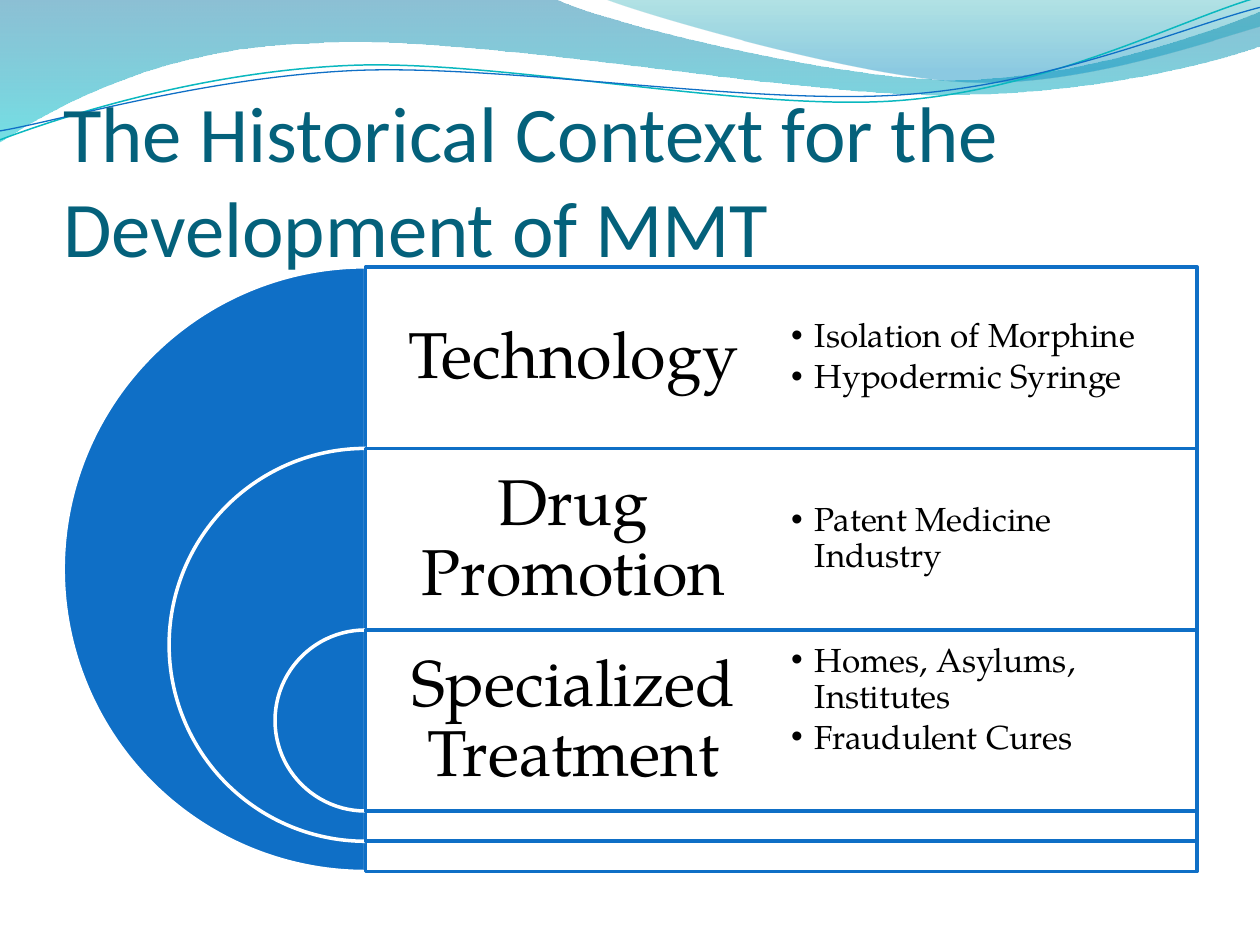
from lxml import etree
from pptx import Presentation
from pptx.dml.color import RGBColor
from pptx.enum import shapes, text
from pptx.oxml.ns import qn
from pptx.util import Cm, Pt

THEME = {
    "title": "04617B", "text": "000000", "accent": "0F6FC6", "paper": "FFFFFF", "teal": "0AB8BF",
    "title_font": "Calibri", "body_font": "TeX Gyre Pagella", "bullet_font": "Arial",
    "title_size": 45, "label_size": 37, "bullet_size": 19,
}

TITLE = "The Historical Context for the Development of MMT"
# Label, bullets, extra bottom inset (cm) that lifts the list
TOPICS = [
    ("Technology", ["Isolation of Morphine", "Hypodermic Syringe"], 0),
    ("Drug Promotion", ["Patent Medicine Industry"], 0),
    ("Specialized Treatment", ["Homes, Asylums, Institutes", "Fraudulent Cures"], 0.84),
]

# Wave outlines in cm: one point is a straight step, three points a Bezier curve.
# Gradient stops are position, colour, opacity in percent.
WAVES = [
    ((0, 0),
     [[(11.18, -0.03)],
      [(12.09, 0.43), (16.87, 1.6), (19.25, 1.6)],
      [(21.67, 1.6), (24.33, 0.66), (25.4, 0.23)],
      [(25.43, 0.91)],
      [(24.97, 1.12), (22.1, 1.93), (18.95, 1.91)],
      [(15.8, 1.91), (9.7, 0.71), (6.53, 0.86)],
      [(3.28, 0.91), (1.17, 2.11), (-0.03, 2.87)]],
     [(0, "0074A1", 45), (1, "00C6CF", 55)]),
    ((12.17, -0.03),
     [[(12.93, 0.28), (17.32, 1.57), (19.53, 1.65)],
      [(21.74, 1.75), (24.41, 0.81), (25.4, 0.53)],
      [(25.4, 0)]],
     [(0, "00A1A9", 30), (0.8, "008BBF", 45)]),
]
RIPPLES = [
    ((0, 2.82),
     [[(1.22, 2.36), (4.01, 1.45), (7.04, 1.32)],
      [(10.03, 1.19), (15.06, 2.26), (18.11, 2.03)],
      [(21.16, 1.8), (23.83, 0.38), (25.35, -0.05)]],
     "teal", 0.85),
    ((0, 2.64),
     [[(1.19, 2.44), (4.17, 1.55), (7.19, 1.42)],
      [(10.24, 1.3), (15.16, 2.13), (18.21, 1.91)],
      [(21.23, 1.7), (23.9, 0.53), (25.4, 0.15)]],
     "accent", 0.75),
]

# Nested circles share a vertical axis; each starts one row lower (cm)
AXIS, TOP, ROW = 7.37, 5.38, 3.66
DIAMETER, SHRINK = 12.19, 4.27
PANEL_WIDTH = 16.76


def color(name):
    return RGBColor.from_string(THEME.get(name, name))


def set_opacity(fill_color, percent):
    etree.SubElement(fill_color, qn("a:alpha")).set("val", str(percent * 1000))


def add_outline(slide, start, segments, close):
    """Draw through all points, then join each curve's three steps into one Bezier."""
    builder = slide.shapes.build_freeform(*map(Cm, start))
    builder.add_line_segments([tuple(map(Cm, point)) for segment in segments for point in segment],
                              close=close)
    outline = builder.convert_to_shape()
    outline.shadow.inherit = False
    steps = iter(list(outline._element.spPr.iter(qn("a:lnTo"))))
    for segment in segments:
        parts = [next(steps) for _ in segment]
        if len(parts) == 3:
            curve = etree.Element(qn("a:cubicBezTo"))
            parts[0].addprevious(curve)
            for part in parts:
                curve.append(part[0])
                part.getparent().remove(part)
    return outline


def add_wave(slide, start, segments, stops):
    wave = add_outline(slide, start, segments, True)
    wave.line.fill.background()
    wave.fill.gradient()
    wave.fill.gradient_angle = 270
    for stop, (position, shade, _) in zip(wave.fill.gradient_stops, stops):
        stop.position = position
        stop.color.rgb = color(shade)
    tints = list(wave._element.spPr.iter(qn("a:srgbClr")))
    for tint, (_, _, opacity) in zip(tints, stops):
        set_opacity(tint, opacity)


def add_ripple(slide, start, segments, shade, width):
    ripple = add_outline(slide, start, segments, False)
    ripple.fill.background()
    ripple.line.color.rgb = color(shade)
    ripple.line.width = Pt(width)


def add_block(slide, kind, box, fill, line):
    block = slide.shapes.add_shape(kind, *map(Cm, box))
    block.shadow.inherit = False
    block.fill.solid()
    block.fill.fore_color.rgb = color(fill)
    block.line.color.rgb = color(line)
    block.line.width = Pt(2)
    return block


def style(paragraph, font, size, shade):
    paragraph.font.name = THEME[font]
    paragraph.font.size = Pt(THEME[size])
    paragraph.font.color.rgb = color(shade)


def set_insets(frame, left, top, right, bottom):
    frame.margin_left, frame.margin_top = Cm(left), Cm(top)
    frame.margin_right, frame.margin_bottom = Cm(right), Cm(bottom)


def add_words(slide, box, lines, size, inset, lift=0):
    frame = slide.shapes.add_textbox(*map(Cm, box)).text_frame
    frame.word_wrap = True
    frame.vertical_anchor = text.MSO_ANCHOR.MIDDLE
    set_insets(frame, inset, inset, inset, inset + lift)
    frame.text = "\n".join(lines)
    for paragraph in frame.paragraphs:
        style(paragraph, "body_font", size, "text")
        paragraph.line_spacing = 0.9
    return frame.paragraphs


def add_bullet(paragraph):
    paragraph.space_after = Pt(3)
    properties = paragraph._p.get_or_add_pPr()
    properties.set("marL", str(Cm(0.48)))
    properties.set("indent", str(Cm(-0.48)))
    run_defaults = properties.find(qn("a:defRPr"))
    run_defaults.addprevious(etree.Element(qn("a:buFont"), typeface=THEME["bullet_font"]))
    run_defaults.addprevious(etree.Element(qn("a:buChar"), char="•"))


def add_topic(slide, index, label, bullets, lift):
    diameter = DIAMETER - index * SHRINK
    top = TOP + index * ROW
    half = PANEL_WIDTH / 2

    arc = add_block(slide, shapes.MSO_SHAPE.PIE,
                    (AXIS - diameter / 2, top, diameter, diameter), "accent", "paper")
    arc.adjustments[0], arc.adjustments[1] = 54, 162  # 90 to 270 degrees
    panel = add_block(slide, shapes.MSO_SHAPE.RECTANGLE,
                      (AXIS, top, PANEL_WIDTH, diameter), "paper", "accent")
    set_opacity(panel._element.spPr.find(qn("a:solidFill"))[0], 90)

    heading, = add_words(slide, (AXIS, top, half, ROW), [label], "label_size", 0.38)
    heading.alignment = text.PP_ALIGN.CENTER
    for item in add_words(slide, (AXIS + half, top, half, ROW), bullets,
                          "bullet_size", 0.2, lift):
        add_bullet(item)


def add_title(slide):
    title = slide.shapes.title
    title.left, title.top, title.width, title.height = map(Cm, (1.27, 1.95, 22.86, 3.56))
    frame = title.text_frame
    frame.text = TITLE
    frame.auto_size = text.MSO_AUTO_SIZE.NONE
    frame.vertical_anchor = text.MSO_ANCHOR.BOTTOM
    set_insets(frame, 0, 0.13, 0, 0)
    heading = frame.paragraphs[0]
    heading.alignment = text.PP_ALIGN.LEFT
    style(heading, "title_font", "title_size", "title")
    slide.shapes._spTree.append(title._element)  # in front of the waves


def main():
    deck = Presentation()
    deck.slide_width, deck.slide_height = Cm(25.4), Cm(19.05)
    slide = deck.slides.add_slide(deck.slide_layouts[5])
    for wave in WAVES:
        add_wave(slide, *wave)
    for ripple in RIPPLES:
        add_ripple(slide, *ripple)
    add_title(slide)
    for index, topic in enumerate(TOPICS):
        add_topic(slide, index, *topic)
    deck.save("out.pptx")


if __name__ == "__main__":
    main()
